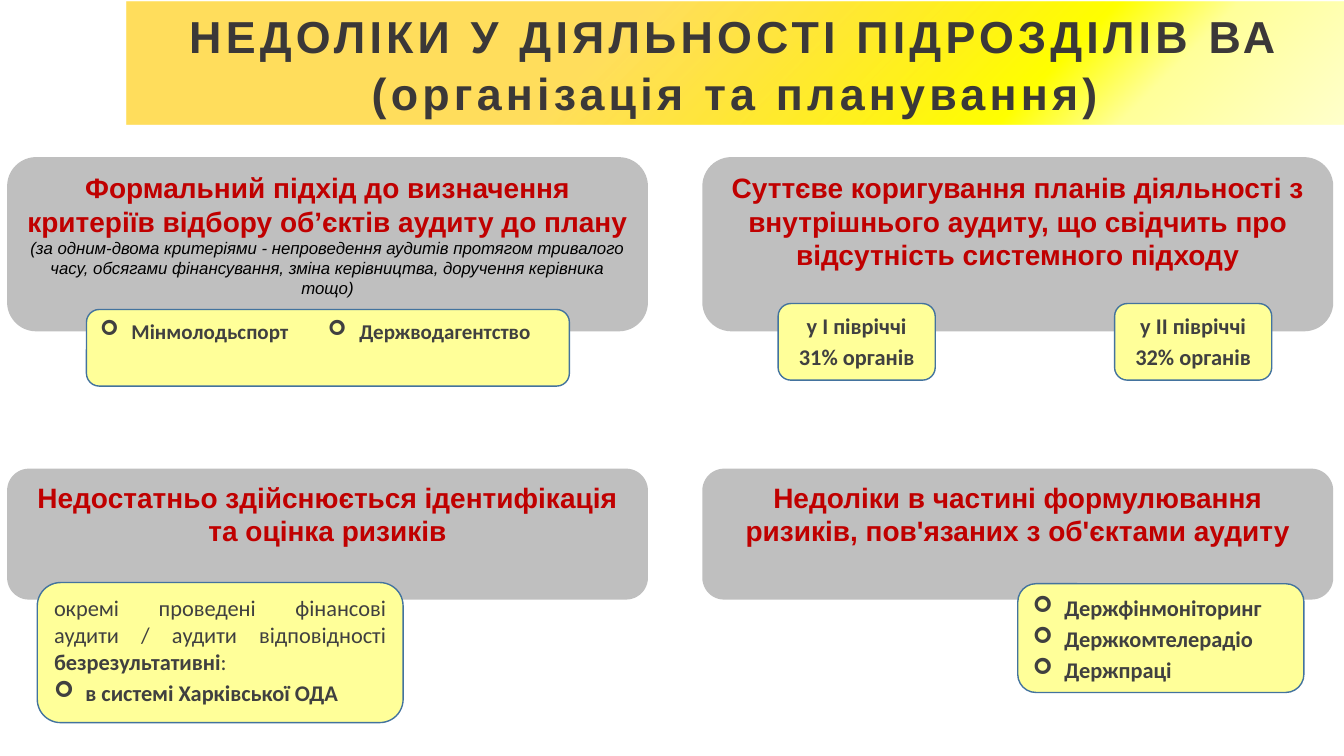
"""Build a slide on shortcomings in the work of internal audit units."""
from lxml import etree
from pptx import Presentation
from pptx import util as u
from pptx.dml.color import RGBColor
from pptx.enum import shapes, text
from pptx.oxml import parse_xml
from pptx.oxml.ns import nsdecls, qn

COLORS = {
    "title": "3B3838", "panel": "BFBFBF", "heading": "C00000", "detail": "000000",
    "note": "FFFF99", "border": "43739E", "body": "404040",
}
GRADIENT = [(39, "FFCC00", 63), (74, "FFFF00", 100), (83, "FFFF99", 100), (100, "FFFFCC", 100)]
TITLE = {"name": "Arial", "size": u.Pt(32), "bold": True, "color": "title"}
HEADING = {"name": "Arial", "size": u.Pt(20), "bold": True, "color": "heading"}
DETAIL = {"name": "Arial", "size": u.Pt(12), "bold": False, "italic": True, "color": "detail"}
BODY = {"name": "Calibri", "size": u.Pt(16), "bold": False, "color": "body"}
STRONG = {**BODY, "bold": True}
COLUMN = {**STRONG, "size": u.Pt(15)}
CENTER, JUSTIFY = text.PP_ALIGN.CENTER, text.PP_ALIGN.JUSTIFY
LEFT, RIGHT = (0.18, 16.15), (17.7, 15.9)
TOP, BOTTOM = (3.96, 4.39), (11.81, 3.3)


def rgb(name):
    """Return the named colour."""
    return RGBColor.from_string(COLORS[name])


def style(r, fmt):
    """Apply a dict of format values to a run."""
    for key, value in fmt.items():
        if key == "color":
            r.font.color.rgb = rgb(value)
        else:
            setattr(r.font, key, value)


def bullet(p):
    """Give a paragraph an arrow bullet with a hanging indent."""
    pPr = p._p.get_or_add_pPr()
    pPr.set("marL", str(u.Cm(0.79)))
    pPr.set("indent", str(-u.Cm(0.79)))
    etree.SubElement(pPr, qn("a:buFont")).set("typeface", "Wingdings")
    etree.SubElement(pPr, qn("a:buChar")).set("char", "➢")


def add_paragraph(tf, first, runs, align, after=0, bulleted=False):
    """Write one paragraph made of (text, format) runs."""
    p = tf.paragraphs[0] if first else tf.add_paragraph()
    p.alignment = align
    p.space_after = u.Pt(after)
    if bulleted:
        bullet(p)
    for words, fmt in runs:
        r = p.add_run()
        r.text = words
        style(r, fmt)


def add_box(s, box, fill, border=None):
    """Add a rounded box and return its text frame."""
    sp = s.shapes.add_shape(shapes.MSO_SHAPE.ROUNDED_RECTANGLE, *map(u.Cm, box))
    sp.shadow.inherit = False
    sp.fill.solid()
    sp.fill.fore_color.rgb = rgb(fill)
    if border:
        sp.line.color.rgb = rgb(border)
        sp.line.width = u.Pt(1)
    else:
        sp.line.fill.background()
    tf = sp.text_frame
    tf.word_wrap = True
    tf.vertical_anchor = text.MSO_ANCHOR.TOP
    return tf


def add_panel(s, column, row, heading, detail=None):
    """Add a grey panel with a red heading and an optional detail."""
    tf = add_box(s, (column[0], row[0], column[1], row[1]), "panel")
    add_paragraph(tf, True, [(heading, HEADING)], CENTER)
    if detail:
        add_paragraph(tf, False, [(detail, DETAIL)], CENTER)


def add_note(s, box, lines, align=JUSTIFY, bulleted=True, fmt=STRONG, after=3):
    """Add a yellow note with one paragraph per line."""
    tf = add_box(s, box, "note", "border")
    for i, line in enumerate(lines):
        add_paragraph(tf, i == 0, [(line, fmt)], align, after, bulleted)
    return tf


def add_title(s, lines):
    """Place the title and give it a gradient band."""
    sp = s.shapes.title
    sp.left, sp.top, sp.width, sp.height = map(u.Cm, (3.18, 0.03, 30.69, 3.1))
    stops = "".join(
        f'<a:gs pos="{pos * 1000}"><a:srgbClr val="{color}">'
        f'<a:alpha val="{alpha * 1000}"/></a:srgbClr></a:gs>'
        for pos, color, alpha in GRADIENT)
    sp._element.spPr.append(parse_xml(
        f'<a:gradFill {nsdecls("a")}><a:gsLst>{stops}</a:gsLst>'
        '<a:lin ang="2700000" scaled="0"/></a:gradFill>'))
    tf = sp.text_frame
    tf.auto_size = text.MSO_AUTO_SIZE.NONE
    tf.word_wrap = True
    tf.vertical_anchor = text.MSO_ANCHOR.MIDDLE
    p = tf.paragraphs[0]
    p.text = "\v".join(lines)
    p.alignment = CENTER
    p.line_spacing = 1.05
    for r in p.runs:
        style(r, TITLE)
        r._r.get_or_add_rPr().set("spc", "300")


def main():
    """Build and save the slide."""
    prs = Presentation()
    prs.slide_width, prs.slide_height = u.Cm(33.87), u.Cm(19.05)
    s = prs.slides.add_slide(prs.slide_layouts[5])
    add_title(s, ["НЕДОЛІКИ У ДІЯЛЬНОСТІ ПІДРОЗДІЛІВ ВА", "(організація та планування)"])

    add_panel(s, LEFT, BOTTOM, "Недостатньо здійснюється ідентифікація та оцінка ризиків")
    add_panel(s, LEFT, TOP,
              "Формальний підхід до визначення критеріїв відбору об’єктів аудиту до плану",
              "(за одним-двома критеріями - непроведення аудитів протягом тривалого часу, "
              "обсягами фінансування, зміна керівництва, доручення керівника тощо)")
    add_panel(s, RIGHT, TOP, "Суттєве коригування планів діяльності з внутрішнього аудиту, "
              "що свідчить про відсутність системного підходу")
    add_panel(s, RIGHT, BOTTOM,
              "Недоліки в частині формулювання ризиків, пов'язаних з об'єктами аудиту")

    add_note(s, (25.65, 14.71, 7.21, 2.74),
             ["Держфінмоніторинг", "Держкомтелерадіо", "Держпраці"])
    for left, half, share in ((19.61, "І", 31), (28.09, "ІІ", 32)):
        add_note(s, (left, 7.65, 3.96, 1.93),
                 [f"у {half} півріччі", f"{share}% органів"], CENTER, False)
    tf = add_note(s, (2.18, 7.8, 12.17, 1.93),
                  ["Мінмолодьспорт", "Держводагентство"], fmt=COLUMN, after=24)
    tf._txBody.bodyPr.set("numCol", "2")

    tf = add_box(s, (0.94, 14.68, 9.22, 3.53), "note", "border")
    add_paragraph(tf, True, [("окремі проведені фінансові аудити / аудити відповідності ", BODY),
                             ("безрезультативні", STRONG), (":", BODY)], JUSTIFY, 3)
    add_paragraph(tf, False, [("в системі Харківської ОДА", STRONG)], JUSTIFY, 3, True)
    prs.save("out.pptx")


if __name__ == "__main__":
    main()
